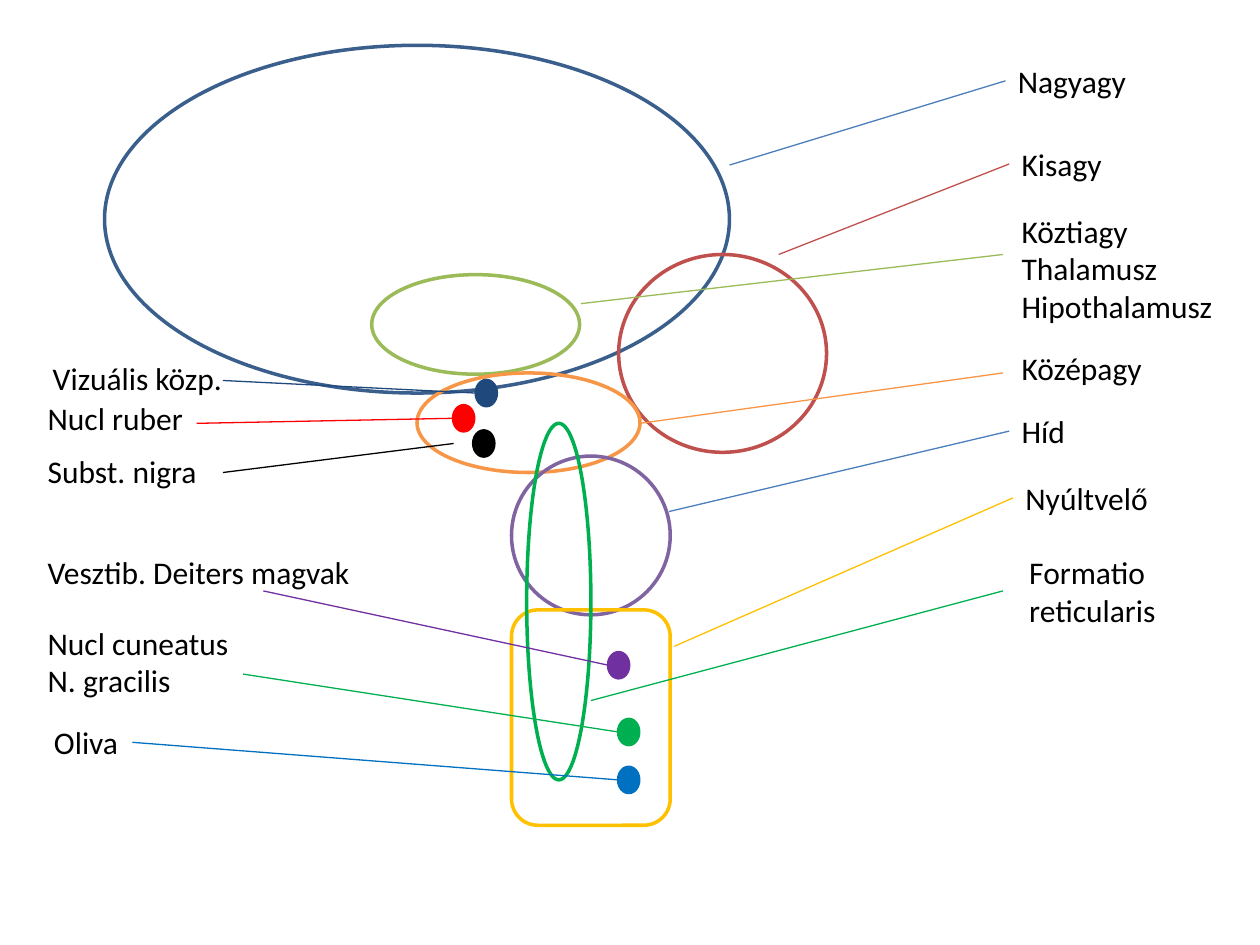
"""Draw a labelled scheme of the parts of the brain."""
from dataclasses import dataclass
from typing import Optional

from lxml import etree
from pptx import Presentation, util as u
from pptx.dml.color import RGBColor
from pptx.enum import shapes as s, text as t

OVAL, ROUND = s.MSO_SHAPE.OVAL, s.MSO_SHAPE.ROUNDED_RECTANGLE
COLS, ROWS = 100, 75
LEFT, RIGHT = 1, 3


@dataclass(frozen=True)
class Theme:
    font: str = "Calibri"
    size: float = 18
    edge: float = 2
    wire: float = 0.75
    ink: str = "000000"
    blue: str = "3A5F8C"
    pale: str = "4B7EBC"
    brick: str = "C0504D"
    olive: str = "9BBB59"
    orange: str = "F79646"
    mauve: str = "8064A2"
    gold: str = "FFC000"
    green: str = "00B050"
    red: str = "FF0000"
    azure: str = "0070C0"
    plum: str = "7030A0"
    navy: str = "1F497D"


@dataclass(frozen=True)
class Label:
    text: str
    x: float
    y: float
    w: float
    rows: int = 1
    wrap: bool = False


@dataclass(frozen=True)
class Part:
    label: Label
    box: tuple[float, float, float, float]
    start: tuple[float, float]
    end: tuple[float, float]
    hue: str
    wire: Optional[str] = None
    side: Optional[int] = None
    kind: s.MSO_SHAPE = OVAL
    solid: bool = False


T = Theme()


def dot(label: Label, x: float, y: float, end: tuple[float, float], hue: str,
        start: Optional[tuple[float, float]] = None, side: Optional[int] = None) -> Part:
    """Make a small filled nucleus whose wire leaves its left side."""
    return Part(label, (x, y, 1.6, 2), start or (x, y + 1), end, hue, side=side, solid=True)


PARTS = [
    Part(Label("Nagyagy", 79.8, 4.4, 10.7), (8.3, 3.6, 49.6, 27.6),
         (57.9, 13.1), (79.8, 6.4), T.blue, T.pale, LEFT),
    Part(Label("Kisagy", 80.1, 11, 8.4), (49.1, 20.2, 16.5, 15.7),
         (61.8, 20.2), (80.1, 13), T.brick, side=LEFT),
    Part(Label("Köztiagy\nThalamusz\nHipothalamusz", 80.1, 16.3, 17.3, 3),
         (29.5, 21.8, 16.5, 7.9), (46.1, 24.1), (79.6, 20.2), T.olive),
    Part(Label("Középagy", 80.1, 27.2, 11.7), (33.1, 29.6, 17.7, 7.9),
         (50.8, 33.6), (79.6, 29.6), T.orange),
    Part(Label("Híd", 80.1, 32.2, 5.5), (40.6, 36.2, 12.6, 12.6),
         (53.1, 40.6), (80.1, 34.2), T.mauve, T.pale, LEFT),
    Part(Label("Nyúltvelő", 80.4, 37.5, 11.8), (40.6, 48.4, 12.6, 17.1),
         (53.5, 51.3), (80.4, 39.5), T.gold, side=LEFT, kind=ROUND),
    Part(Label("Formatio reticularis", 80.7, 43.4, 16.5, 2, True),
         (41.8, 33.6, 5.1, 28.3), (46.9, 55.6), (79.6, 46.9), T.green),
    dot(Label("Nucl ruber", 2.8, 31.2, 12.9), 36, 32.2, (15.6, 33.6), T.red),
    dot(Label("Subst. nigra", 2.8, 35.4, 14), 37.6, 34.2, (17.7, 37.5), T.ink, (36, 35.2)),
    dot(Label("Nucl cuneatus\nN. gracilis", 2.8, 49, 16.5, 2),
        49.1, 57.1, (19.3, 53.5), T.green),
    dot(Label("Oliva", 3.3, 56.9, 7.2), 49.1, 60.9, (10.5, 58.9), T.azure, side=RIGHT),
    dot(Label("Vesztib. Deiters magvak", 2.8, 43.4, 26.3), 48.3, 51.8, (20.9, 46.9), T.plum),
    dot(Label("Vizuális közp.", 3.2, 28, 15.6), 37.8, 30.2, (17.7, 30.2), T.navy),
]

deck = Presentation()
deck.slide_width, deck.slide_height = u.Inches(10), u.Inches(7.5)
slide = deck.slides.add_slide(deck.slide_layouts[6])


def grid(*cells: float) -> list[int]:
    """Turn alternating columns and rows into slide lengths."""
    units = deck.slide_width / COLS, deck.slide_height / ROWS
    return [round(cell * units[i % 2]) for i, cell in enumerate(cells)]


def stroke(line, hue: str, width: float) -> None:
    """Colour a line and set its width."""
    line.color.rgb = RGBColor.from_string(hue)
    line.width = u.Pt(width)


def outline(part: Part) -> None:
    """Draw a brain part as a ring or a filled dot."""
    shape = slide.shapes.add_shape(part.kind, *grid(*part.box))
    shape.shadow.inherit = False
    stroke(shape.line, part.hue, T.edge)
    if part.solid:
        shape.fill.solid()
        shape.fill.fore_color.rgb = RGBColor.from_string(part.hue)
    else:
        shape.fill.background()


def write(label: Label):
    """Place a label and return its box."""
    box = slide.shapes.add_textbox(*grid(label.x, label.y, label.w, 1 + 3.03 * label.rows))
    frame = box.text_frame
    frame.text = label.text
    look = {"word_wrap": label.wrap, "auto_size": t.MSO_AUTO_SIZE.SHAPE_TO_FIT_TEXT}
    for name, value in look.items():
        setattr(frame, name, value)
    for para in frame.paragraphs:
        for name, value in {"name": T.font, "size": u.Pt(T.size)}.items():
            setattr(para.font, name, value)
        para.font.color.rgb = RGBColor.from_string(T.ink)
    return box


def wire(part: Part, box) -> None:
    """Lead a line from a part to its label."""
    line = slide.shapes.add_connector(s.MSO_CONNECTOR.STRAIGHT, *grid(*part.start, *part.end))
    stroke(line.line, part.wire or part.hue, T.wire)
    props = line._element.spPr
    etree.SubElement(props, props.tag.replace("spPr", "effectLst").replace(
        "presentationml", "drawingml"), nsmap=None)
    if part.side is not None:
        line.end_connect(box, part.side)


for item in PARTS:
    outline(item)
    wire(item, write(item.label))

deck.save("out.pptx")
